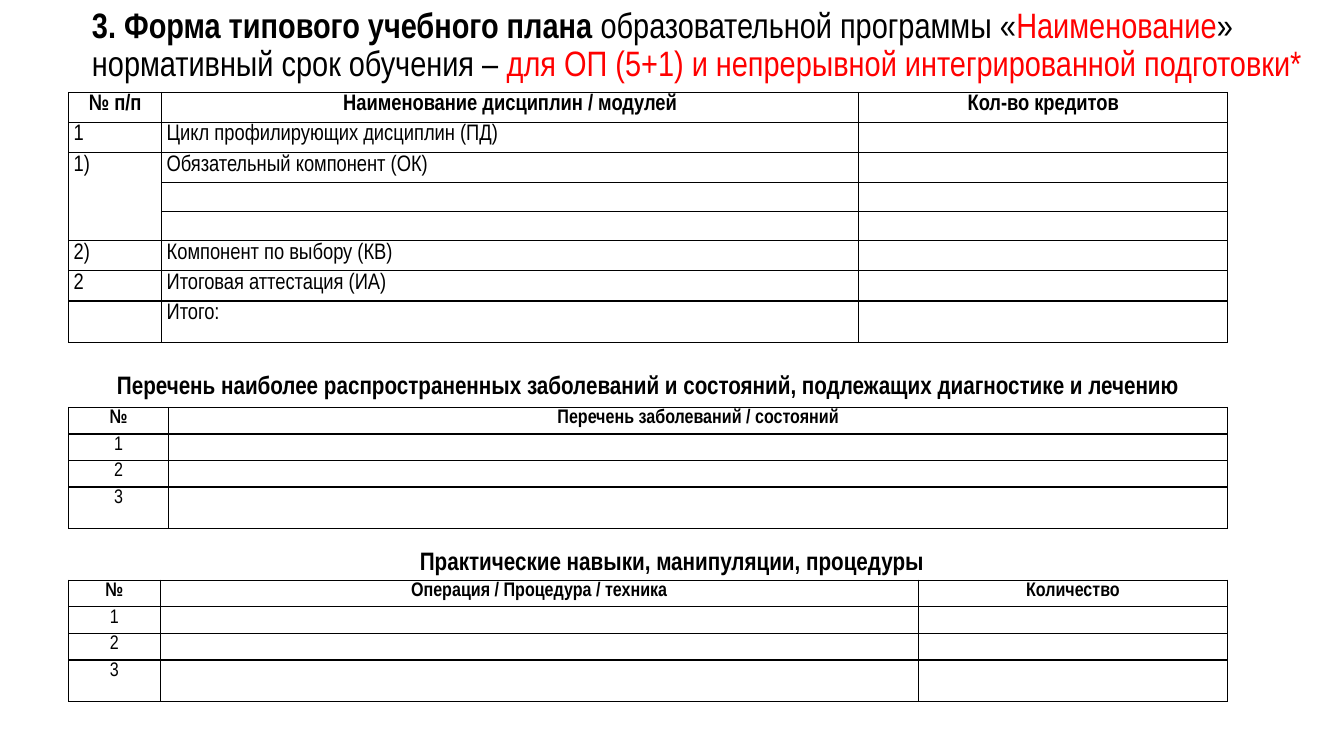
import dataclasses

import pptx
import pptx.dml.color
import pptx.enum.text
import pptx.oxml
import pptx.oxml.ns
import pptx.util
from lxml import etree

Pt = pptx.util.Pt
ALIGN = pptx.enum.text.PP_ALIGN
MIDDLE = pptx.enum.text.MSO_ANCHOR.MIDDLE


@dataclasses.dataclass(frozen=True)
class Theme:
    font: str = "Arial Narrow"
    black: str = "000000"
    red: str = "FF0000"
    title_size: float = 25.2
    heading_size: float = 18
    plan_size: float = 16
    list_size: float = 14
    border: float = 1
    text_spacing: float = 0.9
    cell_spacing: float = 1.07


@dataclasses.dataclass(frozen=True)
class Heading:
    text: str
    left: float
    top: float
    height: float


@dataclasses.dataclass(frozen=True)
class Grid:
    top: float
    columns: tuple[float, ...]
    row_height: float
    size: float
    rows: tuple[tuple[str, ...], ...]
    centred: bool = True
    merged_rows: tuple[int, int] | None = None  # first and last, in column 0


THEME = Theme()
LEFT, WIDTH = 49, 828
LAST_ROW = 29.5

TITLE = (
    ("3. Форма типового учебного плана ", True, THEME.black),
    ("образовательной программы «", False, THEME.black),
    ("Наименование", False, THEME.red),
    ("»\vнормативный срок обучения – ", False, THEME.black),
    ("для ОП (5+1) и непрерывной интегрированной подготовки*", False, THEME.red),
)

HEADINGS = (
    Heading("Перечень наиболее распространенных заболеваний и состояний, "
            "подлежащих диагностике и лечению", LEFT, 252.5, 47),
    Heading("Практические навыки, манипуляции, процедуры", 66, 387, 29),
)

GRIDS = (
    Grid(66, (66.5, 498, 263.5), 20.7, THEME.plan_size, (
        ("№ п/п", "Наименование дисциплин / модулей", "Кол-во кредитов"),
        ("1", "Цикл профилирующих дисциплин (ПД)", ""),
        ("1)", "Обязательный компонент (ОК)", ""),
        ("", "", ""),
        ("", "", ""),
        ("2)", "Компонент по выбору (КВ)", ""),
        ("2", "Итоговая аттестация (ИА)", ""),
        ("", "Итого:", ""),
    ), centred=False, merged_rows=(2, 4)),
    Grid(291, (71.5, 756.5), 18.6, THEME.list_size, (
        ("№", "Перечень заболеваний / состояний"),
        *((str(number), "") for number in range(1, 4)),
    )),
    Grid(414.5, (65.5, 541.5, 221), 18.6, THEME.list_size, (
        ("№", "Операция / Процедура / техника", "Количество"),
        *((str(number), "", "") for number in range(1, 4)),
    )),
)


def colour(code: str) -> pptx.dml.color.RGBColor:
    return pptx.dml.color.RGBColor.from_string(code)


def format_para(para, size: float, align, spacing: float) -> None:
    para.alignment = align
    para.line_spacing = spacing
    para.space_before = Pt(0)
    para.font.name = THEME.font
    para.font.size = Pt(size)


def add_title(page) -> None:
    box = page.shapes.title
    box.left, box.top, box.width, box.height = Pt(58.5), Pt(0), Pt(879), Pt(65.5)
    frame = box.text_frame
    frame.auto_size = pptx.enum.text.MSO_AUTO_SIZE.NONE
    frame.vertical_anchor = MIDDLE
    frame.margin_right = Pt(0)
    para = frame.paragraphs[0]
    format_para(para, THEME.title_size, ALIGN.LEFT, THEME.text_spacing)
    for part, bold, code in TITLE:
        for index, line in enumerate(part.split("\v")):
            if index:
                para.add_line_break()
            span = para.add_run()
            span.text = line
            span.font.bold = bold
            span.font.color.rgb = colour(code)


def add_heading(page, heading: Heading) -> None:
    box = page.shapes.add_textbox(
        Pt(heading.left), Pt(heading.top), Pt(WIDTH), Pt(heading.height))
    frame = box.text_frame
    frame.word_wrap = True
    frame.vertical_anchor = MIDDLE
    para = frame.paragraphs[0]
    para.text = heading.text
    format_para(para, THEME.heading_size, ALIGN.CENTER, THEME.text_spacing)
    para.font.bold = True
    para.font.color.rgb = colour(THEME.black)


def draw_borders(cell) -> None:
    properties = cell._tc.get_or_add_tcPr()
    for side in ("lnL", "lnR", "lnT", "lnB"):
        line = etree.SubElement(
            properties, pptx.oxml.ns.qn(f"a:{side}"), w=str(Pt(THEME.border)))
        fill = etree.SubElement(line, pptx.oxml.ns.qn("a:solidFill"))
        etree.SubElement(fill, pptx.oxml.ns.qn("a:srgbClr"), val=THEME.black)


def fill_cell(cell, text: str, grid: Grid, header: bool) -> None:
    draw_borders(cell)
    cell.fill.background()
    cell.margin_left = cell.margin_right = Pt(3.6)
    cell.margin_top = cell.margin_bottom = Pt(0.5)
    para = cell.text_frame.paragraphs[0]
    para.text = text
    align = ALIGN.CENTER if header or grid.centred else ALIGN.LEFT
    format_para(para, grid.size, align, THEME.cell_spacing)
    para.font.bold = header
    para.font.color.rgb = colour(THEME.black)
    if not text:  # an empty cell takes its line height from the end mark
        etree.SubElement(para._p, pptx.oxml.ns.qn("a:endParaRPr"),
                         sz=str(int(grid.size * 100)))


def add_grid(page, grid: Grid) -> None:
    heights = [grid.row_height] * (len(grid.rows) - 1) + [LAST_ROW]
    table = page.shapes.add_table(
        len(heights), len(grid.columns), Pt(LEFT), Pt(grid.top),
        Pt(WIDTH), Pt(sum(heights))).table
    table.first_row = table.horz_banding = False
    for column, width in zip(table.columns, grid.columns):
        column.width = Pt(width)
    for index, (texts, height) in enumerate(zip(grid.rows, heights)):
        table.rows[index].height = Pt(height)
        for position, text in enumerate(texts):
            fill_cell(table.cell(index, position), text, grid, index == 0)
    if grid.merged_rows:
        first, last = grid.merged_rows
        table.cell(first, 0).merge(table.cell(last, 0))


def main() -> None:
    deck = pptx.Presentation()
    deck.slide_width, deck.slide_height = Pt(960), Pt(540)
    page = deck.slides.add_slide(deck.slide_layouts[5])
    add_title(page)
    # Section headings
    for heading in HEADINGS:
        add_heading(page, heading)
    # Curriculum, conditions and skills tables
    for grid in GRIDS:
        add_grid(page, grid)
    deck.save("out.pptx")


if __name__ == "__main__":
    main()
